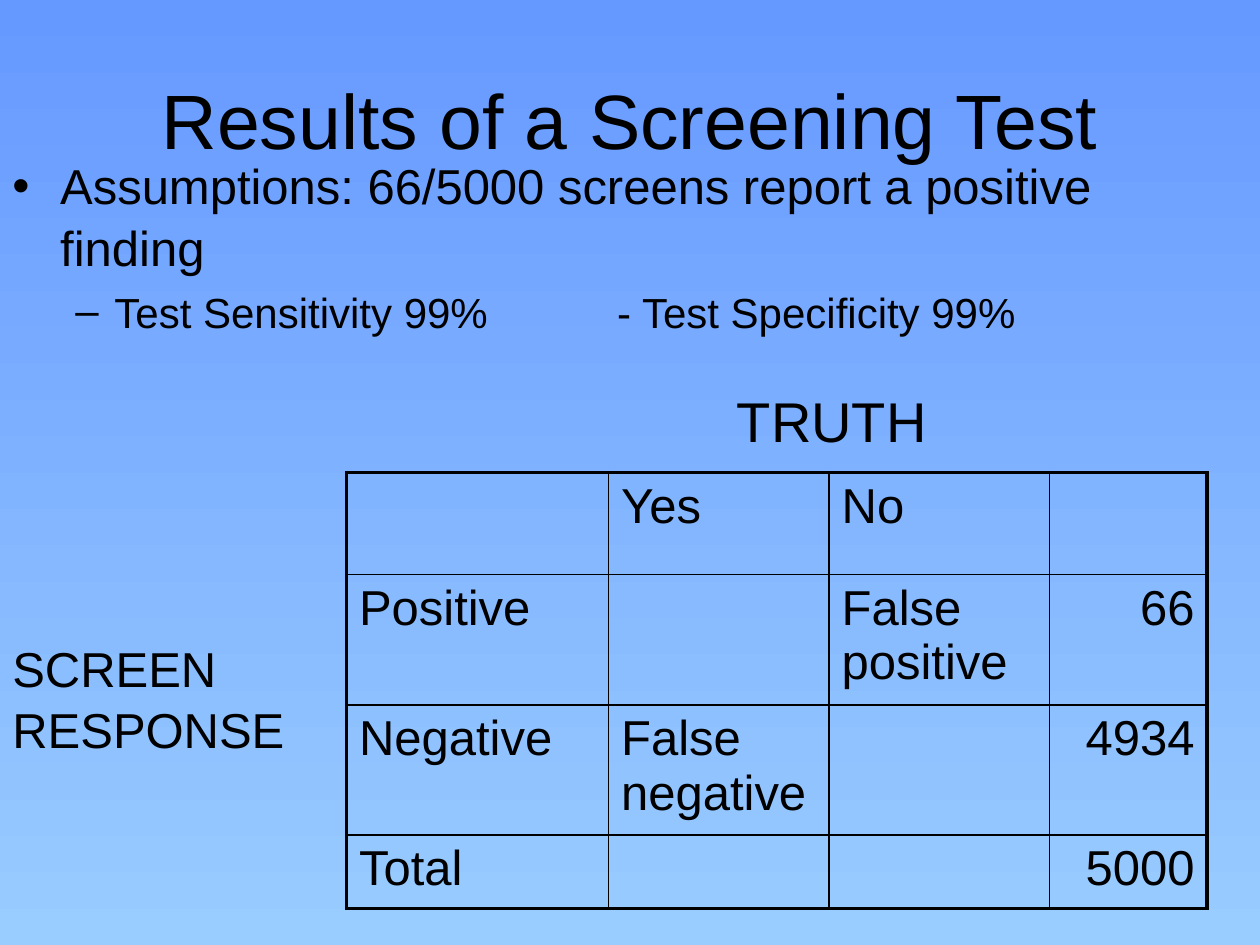
from lxml.etree import SubElement
from pptx import Presentation
from pptx.dml.color import RGBColor
from pptx.enum.text import MSO_ANCHOR as Anchor, PP_ALIGN as Align
from pptx.oxml.ns import qn
from pptx.util import Inches, Pt

COLORS = {"ink": "000000", "sky_top": "6699FF", "sky_bottom": "99CCFF"}
FONT = "Arial"


def write(paragraph, text, size=28, align=Align.LEFT, before=0, line=None):
    paragraph.text = text
    paragraph.alignment = align
    paragraph.space_before = Pt(before)
    if line:
        paragraph.line_spacing = line
    for run in paragraph.runs:
        run.font.name = FONT
        run.font.size = Pt(size)
        run.font.color.rgb = RGBColor.from_string(COLORS["ink"])


class SlideBuilder:
    line_spacing = 1.04
    thin, thick = 1, 2.25

    def __init__(self, slide):
        self.slide = slide

    def background(self):
        fill = self.slide.background.fill
        fill.gradient()
        fill.gradient_angle = 270
        for stop, name in zip(fill.gradient_stops, ("sky_top", "sky_bottom")):
            stop.color.rgb = RGBColor.from_string(COLORS[name])

    def frame(self, left, top, width, height, anchor=Anchor.TOP):
        area = self.slide.shapes.add_textbox(
            Inches(left), Inches(top), Inches(width), Inches(height))
        area.text_frame.word_wrap = True
        area.text_frame.vertical_anchor = anchor
        return area.text_frame

    def label(self, text, place, anchor=Anchor.TOP, **style):
        frame = self.frame(*place, anchor=anchor)
        write(frame.paragraphs[0], text, line=self.line_spacing, **style)

    def bullets(self, items, place):
        frame = self.frame(*place)
        for index, (text, mark, level, margin, hang, size, tab) in enumerate(items):
            paragraph = frame.add_paragraph() if index else frame.paragraphs[0]
            write(paragraph, text, size=size, before=size * 0.2 if index else 0,
                  line=self.line_spacing)
            paragraph.level = level
            props = paragraph._p.get_or_add_pPr()
            props.set("marL", str(Inches(margin)))
            props.set("indent", str(-Inches(hang)))
            SubElement(props, qn("a:buFont"), typeface=FONT)
            SubElement(props, qn("a:buChar"), char=mark)
            if tab:
                stops = SubElement(props, qn("a:tabLst"))
                SubElement(stops, qn("a:tab"), pos=str(Inches(tab)), algn="l")

    def border(self, cell, side, width):
        line = SubElement(cell._tc.get_or_add_tcPr(), qn(f"a:ln{side}"),
                          w=str(Pt(width)))
        fill = SubElement(line, qn("a:solidFill"))
        SubElement(fill, qn("a:srgbClr"), val=COLORS["ink"])

    def table(self, rows, left, top, widths, heights):
        grid = self.slide.shapes.add_table(
            len(rows), len(widths), Inches(left), Inches(top),
            Inches(sum(widths)), Inches(sum(heights))).table
        grid.first_row = grid.horz_banding = False
        for column, width in zip(grid.columns, widths):
            column.width = Inches(width)
        for row, height in zip(grid.rows, heights):
            row.height = Inches(height)
        last_row, last_column = len(rows) - 1, len(widths) - 1
        for r, texts in enumerate(rows):
            for c, text in enumerate(texts):
                cell = grid.cell(r, c)
                write(cell.text_frame.paragraphs[0], text,
                      align=Align.RIGHT if c == last_column else Align.LEFT)
                outer = {"L": c == 0, "R": c == last_column,
                         "T": r == 0, "B": r == last_row}
                for side, is_outer in outer.items():
                    self.border(cell, side, self.thick if is_outer else self.thin)
                cell.fill.background()


def main():
    deck = Presentation()
    deck.slide_width, deck.slide_height = Inches(10), Inches(7.5)
    builder = SlideBuilder(deck.slides.add_slide(deck.slide_layouts[6]))
    builder.background()
    builder.label("Results of a Screening Test", (0.5, 0.3, 9, 1.25),
                  anchor=Anchor.MIDDLE, size=44, align=Align.CENTER)
    builder.bullets([
        ("Assumptions: 66/5000 screens report a positive finding",
         "•", 0, 0.38, 0.38, 28, None),
        ("Test Sensitivity 99%\t- Test Specificity 99%",
         "–", 1, 0.81, 0.31, 24, 4.8),
    ], (0, 1.17, 10, 2.5))
    builder.table([
        ("", "Yes", "No", ""),
        ("Positive", "", "False positive", "66"),
        ("Negative", "False negative", "", "4934"),
        ("Total", "", "", "5000"),
    ], 2.75, 3.75, (2.08, 1.75, 1.75, 1.25), (0.81, 0.97, 0.97, 0.58))
    builder.label("TRUTH", (5.75, 3, 4.25, 0.63), size=32)
    builder.label("SCREEN \vRESPONSE", (0, 5, 4.25, 1.03))
    deck.save("out.pptx")


if __name__ == "__main__":
    main()
